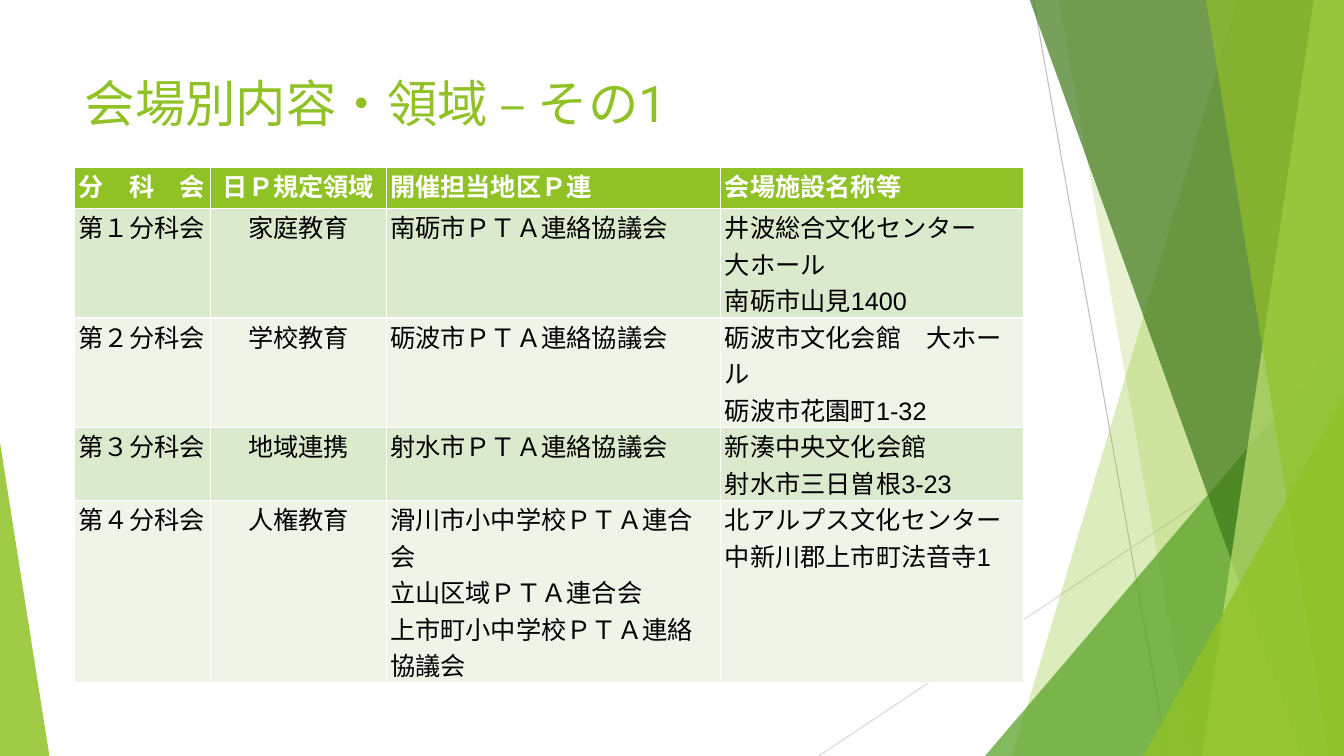
from pptx import Presentation
from pptx.dml.color import RGBColor
from pptx.enum.shapes import MSO_CONNECTOR as CONN, MSO_SHAPE as SHAPE
from pptx.enum.text import MSO_ANCHOR as ANCHOR, MSO_AUTO_SIZE as AUTO, PP_ALIGN as ALIGN
from pptx.oxml.ns import qn
from pptx.util import Inches, Pt
from lxml.etree import SubElement

WHITE = RGBColor(0xFF, 0xFF, 0xFF)
BLACK = RGBColor(0, 0, 0)
LIME = RGBColor(0x90, 0xC2, 0x26)
GREEN = RGBColor(0x54, 0xA0, 0x21)
FOREST = RGBColor(0x3F, 0x78, 0x19)
PALE_LIME = RGBColor(0xC0, 0xE4, 0x74)
GREY = RGBColor(0xBF, 0xBF, 0xBF)
LIGHT_GREY = RGBColor(0xD9, 0xD9, 0xD9)
BAND_DARK = RGBColor(0xDB, 0xE9, 0xCD)
BAND_LIGHT = RGBColor(0xEE, 0xF4, 0xE8)

WIDTH, HEIGHT = 13.33, 7.5
BAND_TOP = -0.01

TITLE = "会場別内容・領域 – その1"
COLUMNS = [1.35, 1.74, 3.32, 3]
ROW_HEIGHT = 0.41
CENTRED_COLUMN = 1
ROWS = [
    ["分　科　会", "日Ｐ規定領域", "開催担当地区Ｐ連", "会場施設名称等"],
    ["第１分科会", "家庭教育", "南砺市ＰＴＡ連絡協議会",
     "井波総合文化センター　大ホール\n南砺市山見1400"],
    ["第２分科会", "学校教育", "砺波市ＰＴＡ連絡協議会",
     "砺波市文化会館　大ホール\n砺波市花園町1-32"],
    ["第３分科会", "地域連携", "射水市ＰＴＡ連絡協議会",
     "新湊中央文化会館\n射水市三日曽根3-23"],
    ["第４分科会", "人権教育",
     "滑川市小中学校ＰＴＡ連合会\n立山区域ＰＴＡ連合会\n上市町小中学校ＰＴＡ連絡協議会",
     "北アルプス文化センター\n中新川郡上市町法音寺1"],
]


class SlideBuilder:
    title_font = dict(name="Roboto", size=Pt(36))
    table_font = dict(name="Arial", size=Pt(18))

    def __init__(self, prs):
        self.s = prs.slides.add_slide(prs.slide_layouts[5])

    def apply(self, target, values):
        for name, value in values.items():
            setattr(target, name, value)

    def fill_text(self, tf, text, font, color, align=ALIGN.LEFT):
        tf.text = text
        for p in tf.paragraphs:
            p.alignment = align
            for r in p.runs:
                self.apply(r.font, font)
                r.font.color.rgb = color

    def paint(self, sp, color, opacity):
        sp.shadow.inherit = False
        sp.line.fill.background()
        sp.fill.solid()
        sp.fill.fore_color.rgb = color
        clr = sp._element.spPr.find(qn("a:solidFill"))[0]
        SubElement(clr, qn("a:alpha"), val=str(opacity * 1000))

    def line(self, start, end, color):
        x1, y1, x2, y2 = map(Inches, (*start, *end))
        cxn = self.s.shapes.add_connector(CONN.STRAIGHT, x1, y1, x2, y2)
        cxn.line.color.rgb = color
        cxn.line.width = Pt(0.75)
        SubElement(cxn._element.spPr, qn("a:effectLst"))

    def band(self, top_x, bottom_x, color, opacity):
        """Full-height band from a slanted left edge to the slide's right edge."""
        corners = [(top_x, BAND_TOP), (WIDTH, BAND_TOP), (WIDTH, HEIGHT), (bottom_x, HEIGHT)]
        points = [(Inches(x), Inches(y)) for x, y in corners]
        builder = self.s.shapes.build_freeform(*points[0])
        builder.add_line_segments(points[1:], close=True)
        self.paint(builder.convert_to_shape(), color, opacity)

    def triangle(self, left, top, width, apex, color, opacity):
        """Triangle standing on the slide's bottom edge."""
        sp = self.s.shapes.add_shape(SHAPE.ISOSCELES_TRIANGLE, Inches(left), Inches(top),
                                     Inches(width), Inches(HEIGHT - top))
        sp.adjustments[0] = apex
        self.paint(sp, color, opacity)

    def title(self, text, left, top, width, height):
        sp = self.s.shapes.title
        self.apply(sp, dict(left=Inches(left), top=Inches(top),
                            width=Inches(width), height=Inches(height)))
        tf = sp.text_frame
        self.apply(tf, dict(word_wrap=True, auto_size=AUTO.NONE, vertical_anchor=ANCHOR.TOP))
        self.fill_text(tf, text, self.title_font, LIME)

    def table(self, rows, columns, left, top):
        table = self.s.shapes.add_table(
            len(rows), len(columns), Inches(left), Inches(top),
            Inches(sum(columns)), Inches(ROW_HEIGHT * len(rows))).table
        for column, width in zip(table.columns, columns):
            column.width = Inches(width)
        for i, texts in enumerate(rows):
            header = i == 0
            fill = LIME if header else BAND_DARK if i % 2 else BAND_LIGHT
            font = dict(self.table_font, bold=header)
            for j, text in enumerate(texts):
                cell = table.cell(i, j)
                self.apply(cell, dict(margin_left=Inches(0.04), margin_right=Inches(0.04),
                                      margin_top=0, margin_bottom=0))
                cell.fill.solid()
                cell.fill.fore_color.rgb = fill
                self.fill_text(cell.text_frame, text, font, WHITE if header else BLACK,
                               ALIGN.CENTER if j == CENTRED_COLUMN else ALIGN.LEFT)


def main():
    prs = Presentation()
    prs.slide_width, prs.slide_height = Inches(WIDTH), Inches(HEIGHT)
    slide = SlideBuilder(prs)

    # Background facets, back to front
    slide.line((10.25, 0), (11.58, HEIGHT), GREY)
    slide.line((WIDTH, 4.03), (8.12, HEIGHT), LIGHT_GREY)
    slide.band(12.28, 10.04, LIME, 30)
    slide.band(10.5, 11.83, LIME, 20)
    slide.triangle(9.77, 3.33, 3.56, 1, GREEN, 72)
    slide.band(10.21, 12.91, FOREST, 70)
    slide.band(13.03, 11.92, PALE_LIME, 70)
    slide.band(11.96, 13.18, LIME, 65)
    slide.triangle(11.34, 3.93, 1.99, 1, LIME, 80)
    slide.triangle(0, 4.39, 0.49, 0, LIME, 85)

    # Title and venue table
    slide.title(TITLE, 0.74, 0.67, 9.4, 1.44)
    slide.table(ROWS, COLUMNS, 0.74, 1.66)

    prs.save("out.pptx")


if __name__ == "__main__":
    main()
